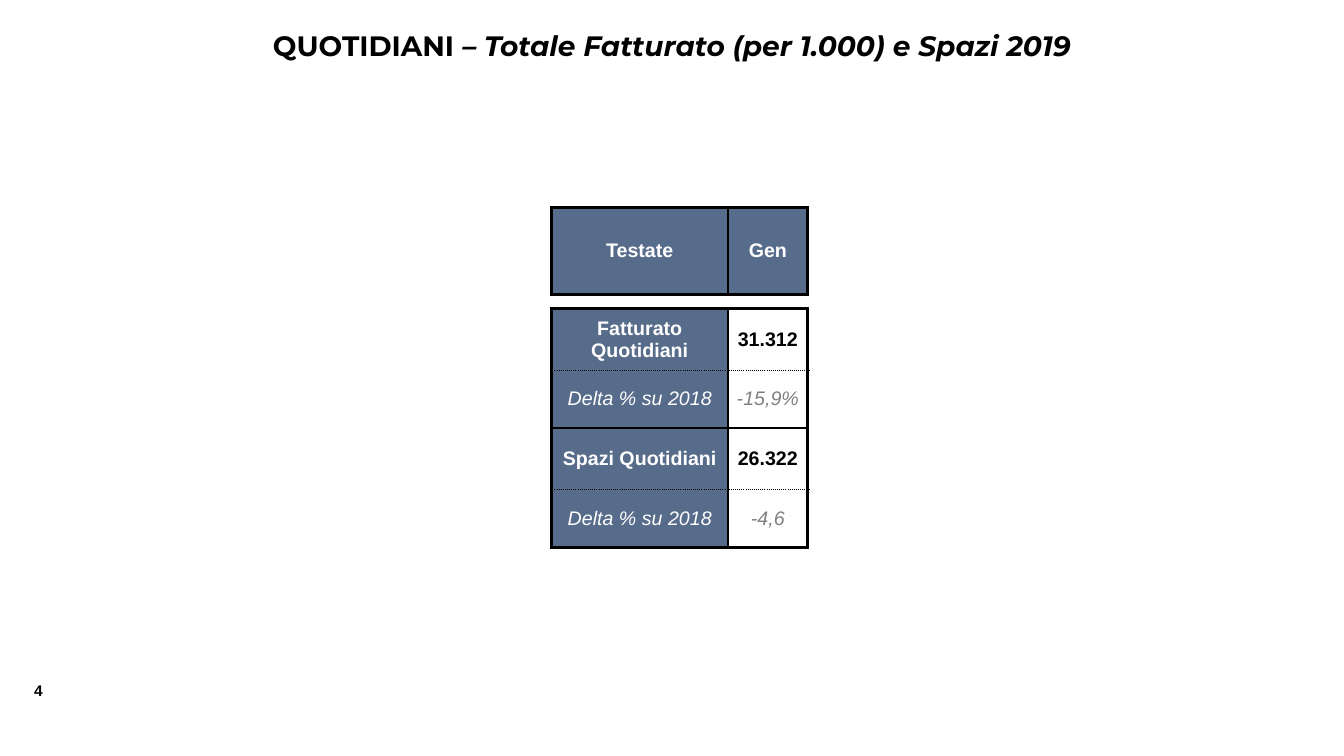
"""Build the slide on newspaper revenue and advertising space for 2019."""
from dataclasses import dataclass

from lxml import etree
from pptx import Presentation
from pptx.dml.color import RGBColor
from pptx.enum.text import MSO_ANCHOR, PP_ALIGN
from pptx.oxml.ns import qn
from pptx.util import Pt

LEFT, CENTER = PP_ALIGN.LEFT, PP_ALIGN.CENTER
MIDDLE = MSO_ANCHOR.MIDDLE


@dataclass(frozen=True)
class Theme:
    black: str = "000000"
    white: str = "FFFFFF"
    gray: str = "808080"
    slate: str = "576B8A"
    title_font: str = "Montserrat"
    body_font: str = "Arial"
    title_size: int = 20
    table_size: int = 14
    number_size: int = 11
    gap_size: int = 4


THEME = Theme()
THICK, THIN, DOTTED, NO_LINE = (2.25, "solid"), (1, "solid"), (1, "sysDot"), None
COLUMN_WIDTHS = (126, 57)
HEADER_HEIGHT, GAP_HEIGHT, FIGURE_HEIGHT, DELTA_HEIGHT = 62, 10.2, 44, 41.2
FIGURES = (
    ("Fatturato Quotidiani", "31.312", "-15,9%"),
    ("Spazi Quotidiani", "26.322", "-4,6"),
)


def add_text(paragraph, text, *, size, color=THEME.black, font=THEME.body_font,
             bold=True, italic=False, align=CENTER):
    paragraph.alignment = align
    run = paragraph.add_run()
    run.text = text
    run.font.name = font
    run.font.size = Pt(size)
    run.font.bold = bold
    run.font.italic = italic
    run.font.color.rgb = RGBColor.from_string(color)


def add_box(slide, left, top, width, height):
    frame = slide.shapes.add_textbox(Pt(left), Pt(top), Pt(width), Pt(height)).text_frame
    frame.word_wrap = True
    return frame.paragraphs[0]


def set_borders(cell, top, bottom, sides=THICK):
    properties = cell._tc.get_or_add_tcPr()
    edges = (("a:lnL", sides), ("a:lnR", sides), ("a:lnT", top), ("a:lnB", bottom))
    for position, (tag, style) in enumerate(edges):
        line = etree.Element(qn(tag))
        properties.insert(position, line)
        if style is NO_LINE:
            etree.SubElement(line, qn("a:noFill"))
            continue
        width, dash = style
        line.set("w", str(Pt(width)))
        fill = etree.SubElement(line, qn("a:solidFill"))
        etree.SubElement(fill, qn("a:srgbClr"), val=THEME.black)
        etree.SubElement(line, qn("a:prstDash"), val=dash)


def set_margins(cell, horizontal, vertical):
    cell.margin_left = cell.margin_right = Pt(horizontal)
    cell.margin_top = cell.margin_bottom = Pt(vertical)


def fill_label(cell, text, top, bottom, italic=False):
    cell.fill.solid()
    cell.fill.fore_color.rgb = RGBColor.from_string(THEME.slate)
    cell.vertical_anchor = MIDDLE
    set_margins(cell, 7.2, 3.6)
    set_borders(cell, top, bottom)
    add_text(cell.text_frame.paragraphs[0], text, size=THEME.table_size,
             color=THEME.white, bold=not italic, italic=italic)


def fill_value(cell, text, top, bottom, italic=False):
    cell.fill.background()
    cell.vertical_anchor = MIDDLE
    set_margins(cell, 0, 0)
    set_borders(cell, top, bottom)
    add_text(cell.text_frame.paragraphs[0], text, size=THEME.table_size,
             color=THEME.gray if italic else THEME.black,
             bold=not italic, italic=italic)


def fill_gap(cell):
    cell.fill.background()
    set_margins(cell, 0, 0)
    set_borders(cell, THICK, THICK, sides=NO_LINE)
    etree.SubElement(cell.text_frame.paragraphs[0]._p, qn("a:endParaRPr"),
                     sz=str(THEME.gap_size * 100))


def add_figures_table(slide, left, top):
    heights = [HEADER_HEIGHT, GAP_HEIGHT] + [FIGURE_HEIGHT, DELTA_HEIGHT] * len(FIGURES)
    table = slide.shapes.add_table(
        len(heights), len(COLUMN_WIDTHS), Pt(left), Pt(top),
        Pt(sum(COLUMN_WIDTHS)), Pt(sum(heights))).table
    table.first_row = table.horz_banding = False
    for column, width in zip(table.columns, COLUMN_WIDTHS):
        column.width = Pt(width)
    for row, height in zip(table.rows, heights):
        row.height = Pt(height)

    for column, heading in enumerate(("Testate", "Gen")):
        fill_label(table.cell(0, column), heading, THICK, THICK)
        fill_gap(table.cell(1, column))
    for index, (name, figure, delta) in enumerate(FIGURES):
        figure_row = 2 + 2 * index
        above = THICK if index == 0 else THIN
        below = THICK if index == len(FIGURES) - 1 else THIN
        fill_label(table.cell(figure_row, 0), name, above, DOTTED)
        fill_value(table.cell(figure_row, 1), figure, above, DOTTED)
        fill_label(table.cell(figure_row + 1, 0), "Delta % su 2018", DOTTED, below, italic=True)
        fill_value(table.cell(figure_row + 1, 1), delta, DOTTED, below, italic=True)


def add_title(slide):
    title = add_box(slide, 120, 16.5, 720, 32)
    add_text(title, "QUOTIDIANI ", size=THEME.title_size, font=THEME.title_font)
    add_text(title, "– Totale Fatturato (per 1.000) e Spazi 2019",
             size=THEME.title_size, font=THEME.title_font, italic=True)


def main():
    presentation = Presentation()
    presentation.slide_width, presentation.slide_height = Pt(960), Pt(540)
    slide = presentation.slides.add_slide(presentation.slide_layouts[6])
    add_text(add_box(slide, 17.3, 483, 30, 21), "4", size=THEME.number_size, align=LEFT)
    add_title(slide)
    add_figures_table(slide, 394, 148.3)
    presentation.save("out.pptx")


if __name__ == "__main__":
    main()
